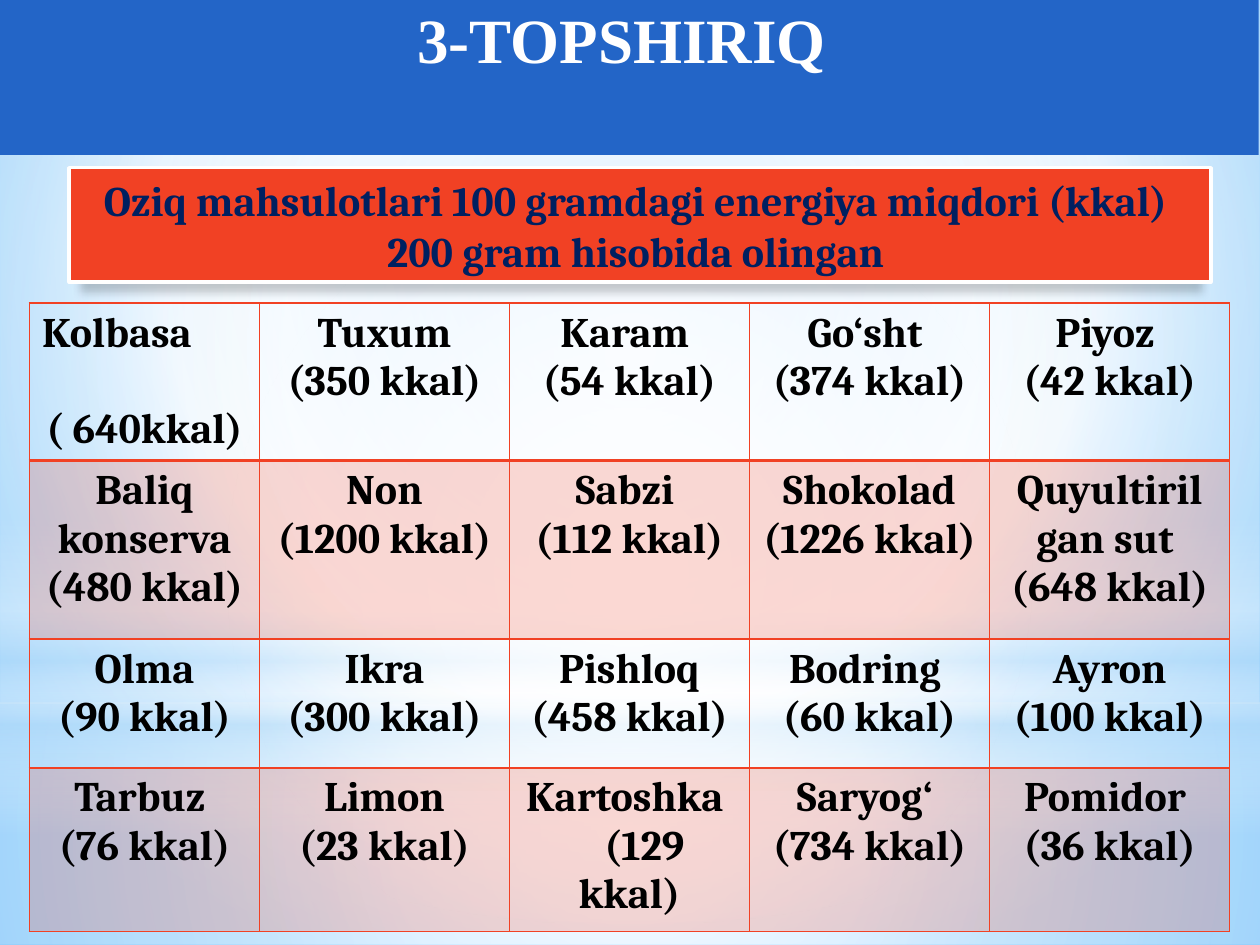
from lxml.etree import SubElement
from pptx import Presentation
from pptx.dml.color import RGBColor
from pptx.enum.shapes import MSO_SHAPE as Shape
from pptx.enum.text import MSO_ANCHOR as Anchor, PP_ALIGN as Align
from pptx.oxml.ns import qn
from pptx.util import Pt

C = {"white": "FFFFFF", "black": "000000", "red": "F14124", "blue": "2365C7",
     "navy": "002060", "sky": "B4DCFA", "light": "9ED5FF", "mid": "5BB9FF"}

TITLE = "3-TOPSHIRIQ "
BANNER = ["Oziq mahsulotlari 100 gramdagi energiya miqdori (kkal) ",
          "200 gram hisobida olingan "]
FOODS = [
    [("Kolbasa", "( 640kkal)"), ("Tuxum", "(350 kkal)"), ("Karam ", "(54 kkal)"),
     ("Go‘sht ", "(374 kkal)"), ("Piyoz ", "(42 kkal)")],
    [("Baliq konserva", "(480 kkal)"), ("Non", "(1200 kkal)"), ("Sabzi ", "(112 kkal)"),
     ("Shokolad", "(1226 kkal)"), ("Quyultiril gan sut ", "(648 kkal)")],
    [("Olma", "(90 kkal)"), ("Ikra", "(300 kkal)"), ("Pishloq", "(458 kkal)"),
     ("Bodring ", "(60 kkal)"), ("Ayron", "(100 kkal)")],
    [("Tarbuz ", "(76 kkal)"), ("Limon", "(23 kkal)"), ("Kartoshka ", "(129 kkal)"),
     ("Saryog‘ ", "(734 kkal)"), ("Pomidor ", "(36 kkal)")],
]
COLS = [131.5, 142.75, 137.25, 137.25, 137.25]
ROWS = [75, 102, 73.5, 93.6]

# Gradients: stops are (position %, colour, opacity %); focus is left, top, right, bottom
CENTRE = (50, 50, 50, 50)
BACKDROP = [(0, "light", 100), (60, "white", 100), (100, "mid", 100)]
GLOWS = [  # preset, top, height, stops, focus (None: vertical)
    (Shape.RECTANGLE, 401.75, 138.25,
     [(0, "white", 91), (37, "white", 76), (100, "sky", 79)], CENTRE),
    (Shape.RECTANGLE, 0, 401.75,
     [(0, "white", 89), (48, "white", 62), (100, "sky", 79)], CENTRE),
    (Shape.RECTANGLE, 296.6, 180,
     [(0, "white", 0), (29, "white", 30), (45, "sky", 40), (55, "white", 26),
      (65, "sky", 60), (100, "white", 0)], None),
    (Shape.OVAL, 126, 401.75, [(0, "white", 100), (56, "white", 0)], CENTRE),
]


def rgb(name):
    return RGBColor.from_string(C[name])


def add(parent, tag, **attrs):
    return SubElement(parent, qn(tag), {k: str(v) for k, v in attrs.items()})


def add_color(parent, name, opacity=100):
    clr = add(parent, "a:srgbClr", val=C[name])
    if opacity < 100:
        add(clr, "a:alpha", val=opacity * 1000)


def set_gradient(fill, element, stops, focus):
    fill.solid()
    solid = element.find(".//" + qn("a:solidFill"))
    grad = solid.makeelement(qn("a:gradFill"), {"rotWithShape": "1"})
    solid.getparent().replace(solid, grad)
    gs_lst = add(grad, "a:gsLst")
    for pos, name, opacity in stops:
        add_color(add(gs_lst, "a:gs", pos=pos * 1000), name, opacity)
    if focus:
        path = add(grad, "a:path", path="circle")
        add(path, "a:fillToRect", **{k: v * 1000 for k, v in zip("ltrb", focus)})
    else:
        add(grad, "a:lin", ang=90 * 60000, scaled=0)


def write(tf, lines, size, font, color):
    tf.word_wrap = True
    for i, line in enumerate(lines):
        p = tf.paragraphs[0] if i == 0 else tf.add_paragraph()
        p.text, p.alignment = line, Align.CENTER
        f = p.font
        f.size, f.name, f.bold = Pt(size), font, True
        f.color.rgb = rgb(color)


def set_borders(cell, widths):
    tc_pr = cell._tc.get_or_add_tcPr()
    for side, width in zip("LRTB", widths):
        ln = add(tc_pr, f"a:ln{side}", w=Pt(width))
        add_color(add(ln, "a:solidFill"), "red")


prs = Presentation()
prs.slide_width, prs.slide_height = Pt(720), Pt(540)
s = prs.slides.add_slide(prs.slide_layouts[5])

# Background and glows
set_gradient(s.background.fill, s.element, BACKDROP, (20, 10, 20, 60))
for preset, top, height, stops, focus in GLOWS:
    sp = s.shapes.add_shape(preset, 0, Pt(top), Pt(720), Pt(height))
    sp.shadow.inherit = False
    sp.line.fill.background()
    set_gradient(sp.fill, sp.element, stops, focus)

# Title bar, in front of the glows
title = s.shapes.title
s.shapes.element.append(title.element)
title.left, title.top, title.width, title.height = 0, 0, Pt(719.3), Pt(88.5)
title.fill.solid()
title.fill.fore_color.rgb = rgb("blue")
tf = title.text_frame
tf.margin_left = tf.margin_top = tf.margin_right = tf.margin_bottom = 0
tf.vertical_anchor = Anchor.TOP
write(tf, [TITLE], 36, "Times New Roman", "white")

# Table of foods
table = s.shapes.add_table(len(ROWS), len(COLS), Pt(16.8), Pt(173.2),
                           Pt(sum(COLS)), Pt(sum(ROWS))).table
for col, width in zip(table.columns, COLS):
    col.width = Pt(width)
for r, (row, height) in enumerate(zip(FOODS, ROWS)):
    table.rows[r].height = Pt(height)
    for c, lines in enumerate(row):
        cell = table.cell(r, c)
        write(cell.text_frame, lines, 24, "Cambria", "black")
        set_borders(cell, (1, 1, 2 if r == 1 else 1, 2 if r == 0 else 1))
        if r % 2:
            cell.fill.solid()
            cell.fill.fore_color.rgb = rgb("red")
            clr = cell._tc.tcPr.find(qn("a:solidFill"))[0]
            add(clr, "a:alpha", val=20000)
        else:
            cell.fill.background()

# Two cells with their own paragraph layout
sausage = table.cell(0, 0).text_frame.paragraphs[0]
sausage.alignment, sausage.space_after = Align.LEFT, Pt(27.6)
potato = table.cell(3, 2).text_frame.paragraphs[1]
p_pr = potato._p.get_or_add_pPr()
for key, value in (("marL", 14), ("marR", 14), ("indent", 17)):
    p_pr.set(key, str(Pt(value)))

# Banner
banner = s.shapes.add_shape(Shape.RECTANGLE, Pt(39.6), Pt(95.8), Pt(652.3), Pt(65.5))
banner.fill.solid()
banner.fill.fore_color.rgb = rgb("red")
banner.line.color.rgb = rgb("white")
banner.line.width = Pt(2)
banner.shadow.inherit = False
effects = banner.element.spPr.find(qn("a:effectLst"))
shadow = add(effects, "a:outerShdw", blurRad=Pt(5), dist=Pt(4), dir=90 * 60000,
             sx=98000, sy=100000, algn="b", rotWithShape=0)
add_color(shadow, "black", 20)
banner.text_frame.vertical_anchor = Anchor.MIDDLE
write(banner.text_frame, BANNER, 24, "Cambria", "navy")

prs.save("out.pptx")
